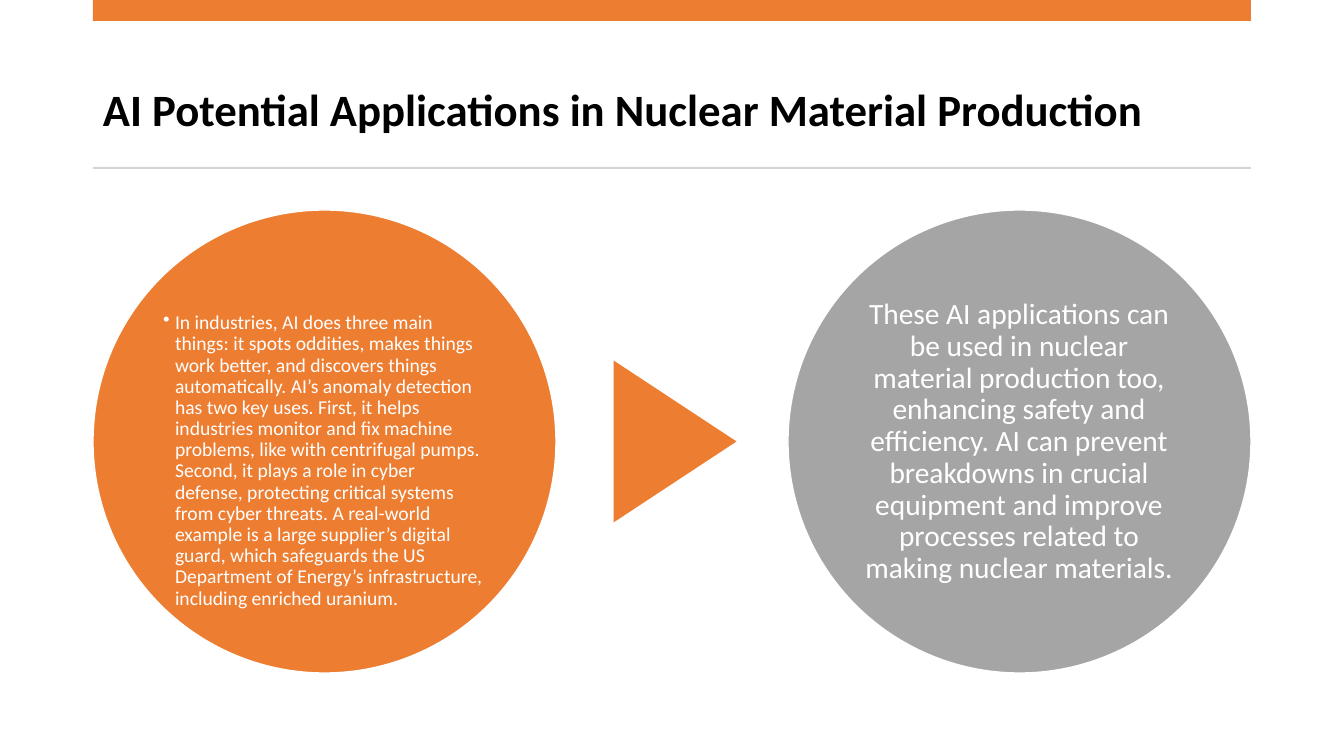
"""Build the slide on AI applications in nuclear material production."""
import pptx
import pptx.util
from lxml import etree
from pptx.dml.color import RGBColor
from pptx.enum.shapes import MSO_SHAPE
from pptx.enum.text import MSO_ANCHOR, PP_ALIGN
from pptx.oxml.ns import qn

PX = 914400 / 100.8
ORANGE = RGBColor(0xED, 0x7D, 0x31)
GRAY = RGBColor(0xA5, 0xA5, 0xA5)
RULE = RGBColor(0xD5, 0xD5, 0xD5)
WHITE = RGBColor(0xFF, 0xFF, 0xFF)
BLACK = RGBColor(0, 0, 0)

LEFT, WIDTH = 93, 1158
DIAMETER, CIRCLE_TOP = 463, 210
TEXT_SIZE = 328

USES = (
    "In industries, AI does three main things: it spots oddities, makes things work better, "
    "and discovers things automatically. AI’s anomaly detection has two key uses. First, it "
    "helps industries monitor and fix machine problems, like with centrifugal pumps. Second, "
    "it plays a role in cyber defense, protecting critical systems from cyber threats. "
    "A real-world example is a large supplier’s digital guard, which safeguards the US "
    "Department of Energy’s infrastructure, including enriched uranium."
)
BENEFITS = (
    "These AI applications can be used in nuclear material production too, enhancing safety "
    "and efficiency. AI can prevent breakdowns in crucial equipment and improve processes "
    "related to making nuclear materials."
)


def add_filled(kind, box, color):
    sp = s.shapes.add_shape(kind, *[round(v * PX) for v in box])
    sp.shadow.inherit = False
    sp.fill.solid()
    sp.fill.fore_color.rgb = color
    sp.line.fill.background()
    return sp


def add_text(box, text, size, color, inset, align=PP_ALIGN.LEFT):
    sp = s.shapes.add_textbox(*[round(v * PX) for v in box])
    tf = sp.text_frame
    tf.word_wrap = True
    tf.vertical_anchor = MSO_ANCHOR.MIDDLE
    tf.margin_left = tf.margin_right = round(inset * PX)
    tf.margin_top = tf.margin_bottom = round(3 * PX)
    tf.text = text
    p = tf.paragraphs[0]
    p.alignment = align
    p.line_spacing = 0.9
    r = p.runs[0]
    r.font.name = "Calibri"
    r.font.size = pptx.util.Pt(size)
    r.font.color.rgb = color
    return p


prs = pptx.Presentation()
prs.slide_width = round(1344 * PX)
prs.slide_height = round(756 * PX)
s = prs.slides.add_slide(prs.slide_layouts[6])

title = add_text((LEFT, 76, WIDTH, 72),
                 "AI Potential Applications in Nuclear Material Production", 32, BLACK, 10)
title.runs[0].font.bold = True

add_filled(MSO_SHAPE.RECTANGLE, (LEFT, 0, WIDTH, 21), ORANGE)
add_filled(MSO_SHAPE.RECTANGLE, (LEFT, 167, WIDTH, 2), RULE)

for x, color in ((LEFT, ORANGE), (LEFT + WIDTH - DIAMETER, GRAY)):
    circle = add_filled(MSO_SHAPE.OVAL, (x, CIRCLE_TOP, DIAMETER, DIAMETER), color)
    circle.line.color.rgb = WHITE
    circle.line.width = pptx.util.Pt(1)

arrow = add_filled(MSO_SHAPE.ISOSCELES_TRIANGLE, (594, 380, 162, 123), ORANGE)
arrow.rotation = 90

p = add_text((160, 297, TEXT_SIZE, TEXT_SIZE), USES, 14, WHITE, 3)
pPr = p._p.get_or_add_pPr()
indent = round(12 * PX)
pPr.set("marL", str(indent))
pPr.set("indent", str(-indent))
etree.SubElement(pPr, qn("a:buChar")).set("char", "•")

add_text((855, 278, TEXT_SIZE, TEXT_SIZE), BENEFITS, 21, WHITE, 3, PP_ALIGN.CENTER)

prs.save("out.pptx")
